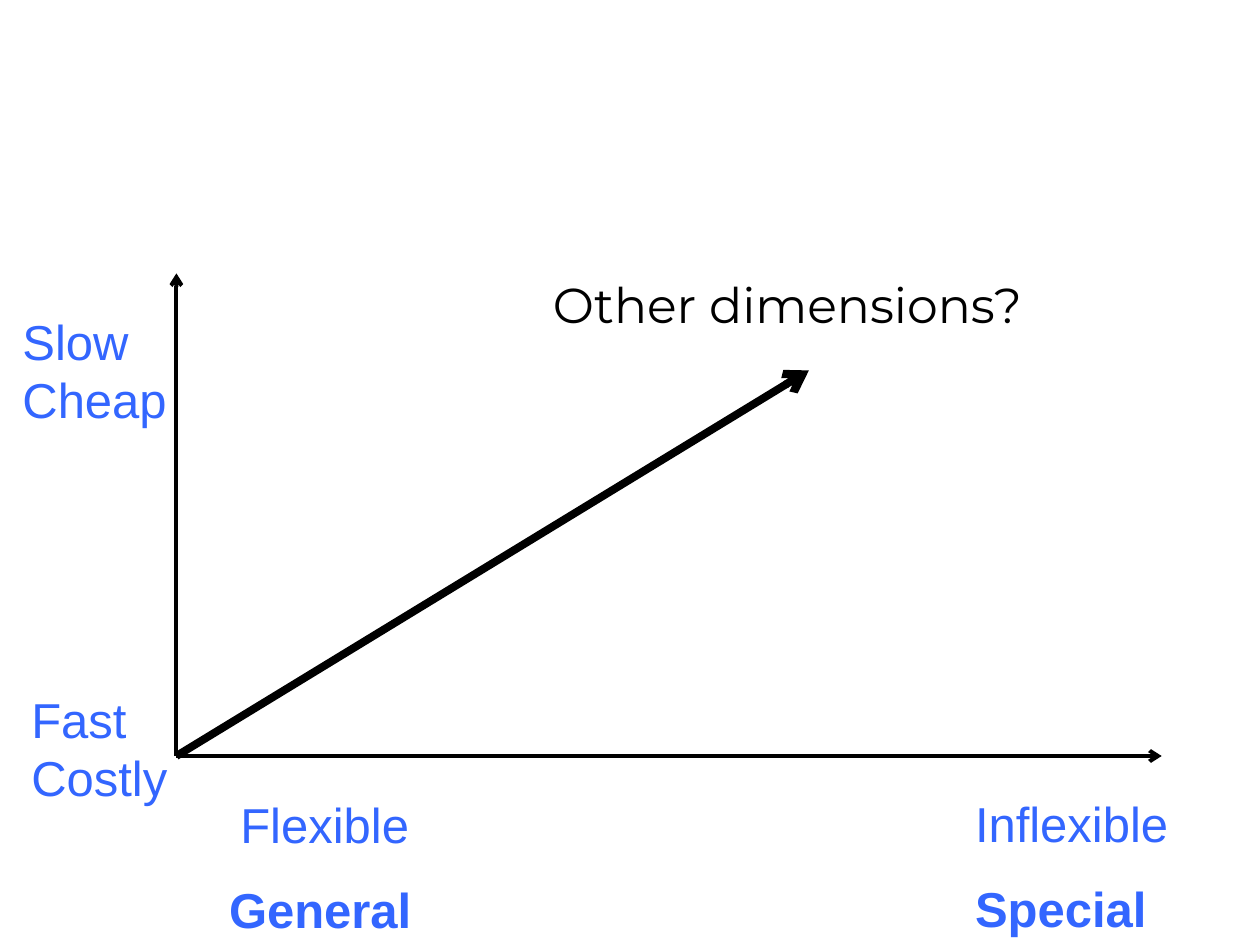
from dataclasses import dataclass

from lxml import etree
from pptx import Presentation
from pptx import util as u
from pptx.dml.color import RGBColor
from pptx.enum import shapes, text
from pptx.oxml.ns import qn

HUES = {"ink": "000000", "blue": "3366FF"}


@dataclass
class Arrow:
    start: tuple[float, float]
    end: tuple[float, float]
    width: float = 2.25


@dataclass
class Label:
    words: str
    box: tuple[float, float, float, float]
    bold: bool = False
    font: str = "Arial"
    hue: str = "blue"


ROOT = (1.4, 6)
ARROWS = [
    Arrow(ROOT, (9.22, 6)),
    Arrow(ROOT, (1.4, 2.17)),
    Arrow(ROOT, (6.42, 2.94), 4.5),
]
LABELS = [
    Label("Fast\nCostly", (0.15, 5.42, 1.29, 1.04)),
    Label("Slow\nCheap", (0.08, 2.42, 1.36, 1.04)),
    Label("Flexible", (1.81, 6.26, 1.56, 0.57)),
    Label("Inflexible", (7.64, 6.25, 1.76, 0.57)),
    Label("General", (1.72, 6.93, 1.67, 0.57), bold=True),
    Label("Special", (7.64, 6.92, 1.58, 0.57), bold=True),
    Label("Other dimensions?", (4.29, 2.13, 4.21, 0.57), font="Montserrat", hue="ink"),
]


def draw_arrow(slide, arrow: Arrow) -> None:
    ends = [u.Inches(n) for n in arrow.start + arrow.end]
    link = slide.shapes.add_connector(shapes.MSO_CONNECTOR.STRAIGHT, *ends)
    link.line.width = u.Pt(arrow.width)
    link.line.color.rgb = RGBColor.from_string(HUES["ink"])
    etree.SubElement(link.line._get_or_add_ln(), qn("a:tailEnd"), type="arrow")
    etree.SubElement(link._element.spPr, qn("a:effectLst"))


def draw_label(slide, label: Label) -> None:
    box = slide.shapes.add_textbox(*[u.Inches(n) for n in label.box])
    frame = box.text_frame
    frame.text = label.words
    frame.word_wrap = False
    frame.auto_size = text.MSO_AUTO_SIZE.SHAPE_TO_FIT_TEXT
    for para in frame.paragraphs:
        for run in para.runs:
            run.font.name = label.font
            run.font.size = u.Pt(28)
            run.font.bold = label.bold
            run.font.color.rgb = RGBColor.from_string(HUES[label.hue])


def main() -> None:
    deck = Presentation()
    deck.slide_width, deck.slide_height = u.Inches(10), u.Inches(7.5)
    slide = deck.slides.add_slide(deck.slide_layouts[6])
    for arrow in ARROWS:
        draw_arrow(slide, arrow)
    for label in LABELS:
        draw_label(slide, label)
    deck.save("out.pptx")


if __name__ == "__main__":
    main()
